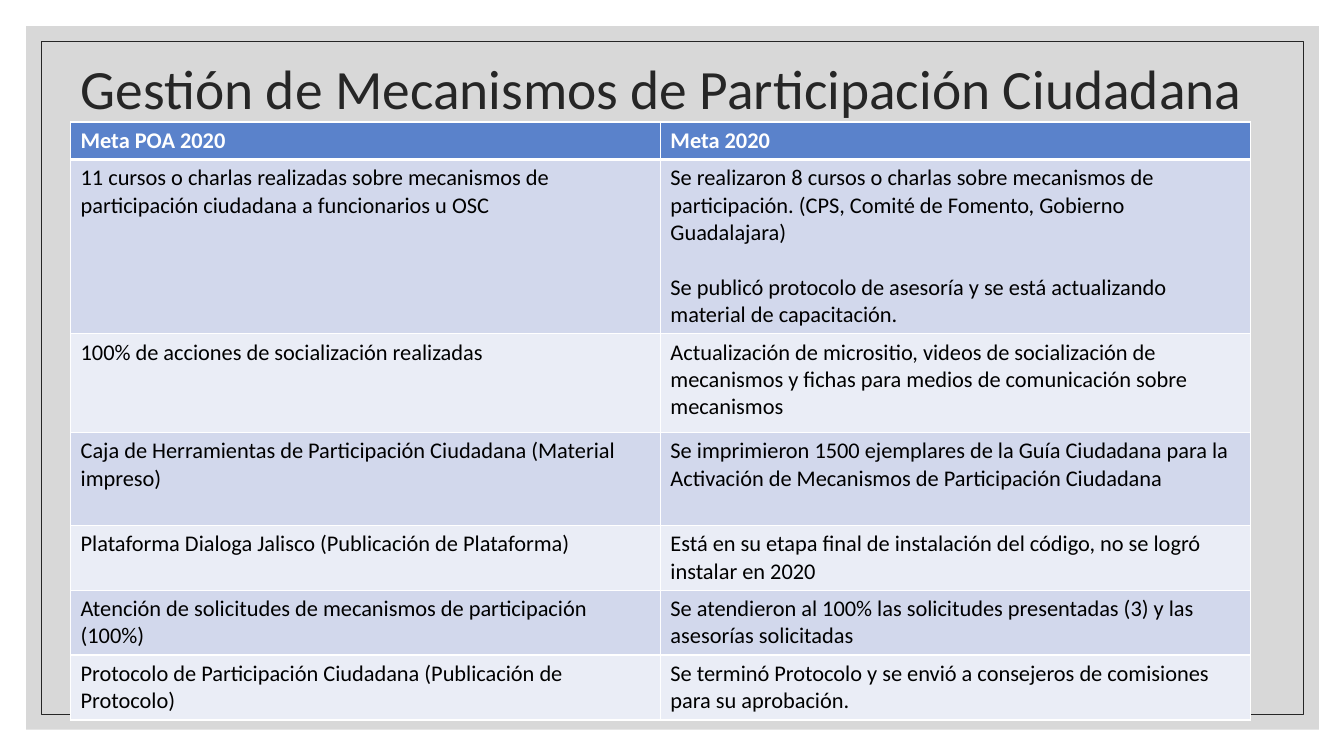
from lxml.etree import SubElement
from pptx import Presentation
from pptx.dml.color import RGBColor
from pptx.enum.shapes import MSO_SHAPE
from pptx.enum.text import MSO_ANCHOR, MSO_AUTO_SIZE, PP_ALIGN
from pptx.oxml.ns import qn
from pptx.util import Pt

PX = 9144  # 100 px to the inch
FONT = "Calibri"
WHITE = RGBColor(0xFF, 0xFF, 0xFF)
BLACK = RGBColor(0x00, 0x00, 0x00)
INK = RGBColor(0x26, 0x26, 0x26)
PANEL_GRAY = RGBColor(0xBF, 0xBF, 0xBF)
HEADER_BLUE = RGBColor(0x5A, 0x82, 0xCB)
BANDS = [RGBColor(0xEA, 0xED, 0xF6), RGBColor(0xD2, 0xD8, 0xEC)]

# Row height in px, goal, result
ROWS = [
    (37, "Meta POA 2020", "Meta 2020"),
    (173, "11 cursos o charlas realizadas sobre mecanismos de participación ciudadana a funcionarios u OSC",
     "Se realizaron 8 cursos o charlas sobre mecanismos de participación. (CPS, Comité de Fomento, Gobierno Guadalajara)\n"
     "Se publicó protocolo de asesoría y se está actualizando material de capacitación."),
    (98, "100% de acciones de socialización realizadas",
     "Actualización de micrositio, videos de socialización de mecanismos y fichas para medios de comunicación sobre mecanismos"),
    (92, "Caja de Herramientas de Participación Ciudadana (Material impreso)",
     "Se imprimieron 1500 ejemplares de la Guía Ciudadana para la Activación de Mecanismos de Participación Ciudadana"),
    (64, "Plataforma Dialoga Jalisco (Publicación de Plataforma)",
     "Está en su etapa final de instalación del código, no se logró instalar en 2020"),
    (64, "Atención de solicitudes de mecanismos de participación (100%)",
     "Se atendieron al 100% las solicitudes presentadas (3) y las asesorías solicitadas"),
    (64, "Protocolo de Participación Ciudadana (Publicación de Protocolo)",
     "Se terminó Protocolo y se envió a consejeros de comisiones para su aprobación."),
]


def add_border(cell, side, points):
    line = SubElement(cell._tc.get_or_add_tcPr(), qn(f"a:ln{side}"), w=str(Pt(points)))
    SubElement(SubElement(line, qn("a:solidFill")), qn("a:srgbClr"), val=str(WHITE))


presentation = Presentation()
presentation.slide_width = 1333 * PX
presentation.slide_height = 750 * PX
slide = presentation.slides.add_slide(presentation.slide_layouts[5])
title = slide.shapes.title

# Background panel and frame, behind the title
panel = slide.shapes.add_shape(MSO_SHAPE.RECTANGLE, 26 * PX, 26 * PX, 1282 * PX, 698 * PX)
panel.fill.solid()
panel.fill.fore_color.rgb = PANEL_GRAY
panel_color = panel.element.spPr.find(qn("a:solidFill")).find(qn("a:srgbClr"))
SubElement(panel_color, qn("a:alpha"), val="60000")
panel.line.fill.background()

frame = slide.shapes.add_shape(MSO_SHAPE.RECTANGLE, 41 * PX, 41 * PX, 1252 * PX, 668 * PX)
frame.fill.background()
frame.line.color.rgb = INK
frame.line.width = Pt(0.5)

for backdrop in (panel, frame):
    backdrop.shadow.inherit = False
    title.element.addprevious(backdrop.element)

# Title
title.left, title.top, title.width, title.height = 70 * PX, 46 * PX, 1217 * PX, 89 * PX
title.text_frame.text = "Gestión de Mecanismos de Participación Ciudadana"
title.text_frame.word_wrap = True
title.text_frame.auto_size = MSO_AUTO_SIZE.NONE
title.text_frame.vertical_anchor = MSO_ANCHOR.MIDDLE
heading = title.text_frame.paragraphs[0]
heading.alignment = PP_ALIGN.LEFT
heading.line_spacing = 0.9
heading.runs[0].font.name = FONT
heading.runs[0].font.size = Pt(39.6)
heading.runs[0].font.color.rgb = INK

# Goals and results
total_height = sum(height for height, *_ in ROWS)
goals = slide.shapes.add_table(len(ROWS), 2, 70 * PX, 121 * PX, 1170 * PX, total_height * PX).table
for row, (height, *texts) in enumerate(ROWS):
    goals.rows[row].height = height * PX
    is_header = row == 0
    for column, text in enumerate(texts):
        cell = goals.cell(row, column)
        for side in "LRTB":
            under_header = (row, side) in ((0, "B"), (1, "T"))
            add_border(cell, side, 3 if under_header else 1)
        cell.fill.solid()
        cell.fill.fore_color.rgb = HEADER_BLUE if is_header else BANDS[row % 2]
        cell.text_frame.text = text
        for position, paragraph in enumerate(cell.text_frame.paragraphs):
            if position:
                paragraph.space_before = Pt(19.5)
            font = paragraph.runs[0].font
            font.name = FONT
            font.size = Pt(16)
            font.bold = is_header
            font.color.rgb = WHITE if is_header else BLACK

presentation.save("out.pptx")
